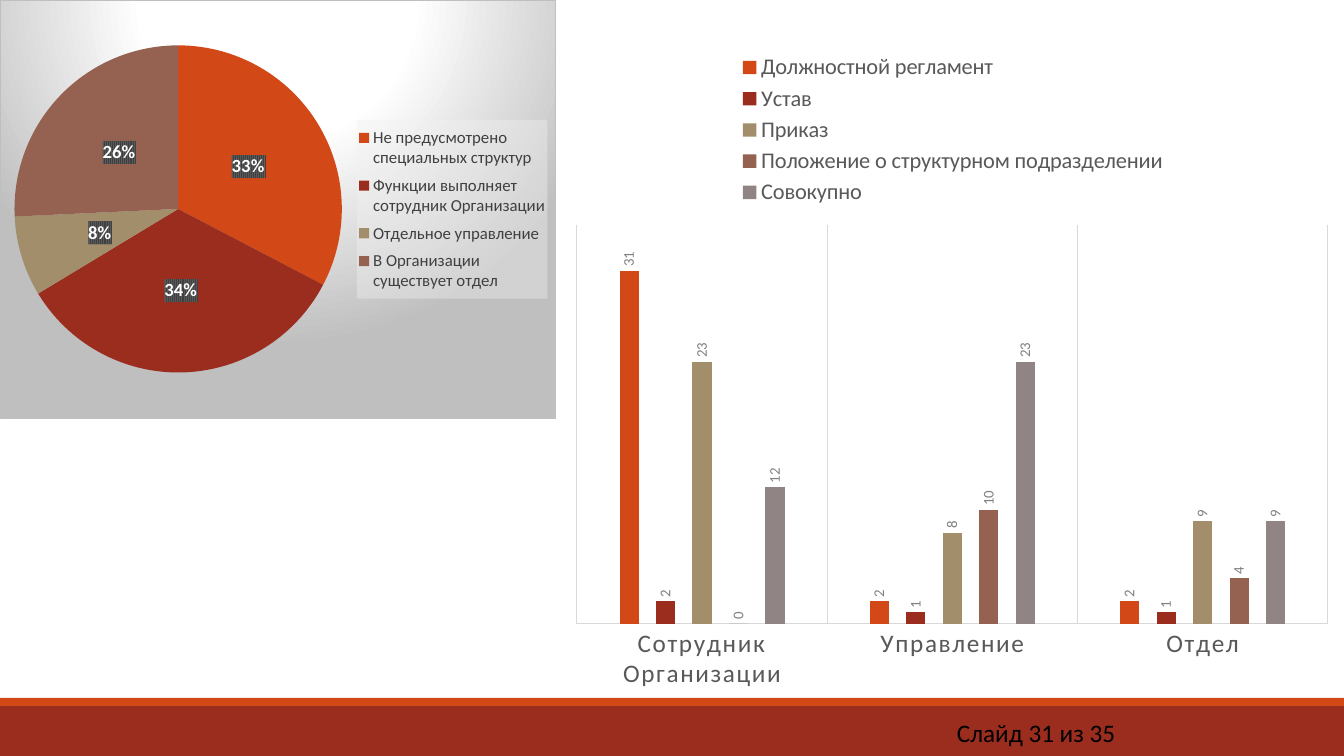
from dataclasses import dataclass

from lxml import etree
from pptx import Presentation
from pptx.chart.chart import Chart
from pptx.chart.data import CategoryChartData
from pptx.dml.color import RGBColor
from pptx.enum.chart import XL_CHART_TYPE, XL_LABEL_POSITION, XL_LEGEND_POSITION, XL_TICK_MARK
from pptx.enum.shapes import MSO_SHAPE
from pptx.enum.text import MSO_AUTO_SIZE
from pptx.oxml import parse_xml
from pptx.oxml.ns import qn
from pptx.util import Emu, Pt

EMU_PER_PX = 12192000 / 1344
FONT = "Calibri"
NAMESPACES = (
    'xmlns:c="http://schemas.openxmlformats.org/drawingml/2006/chart" '
    'xmlns:a="http://schemas.openxmlformats.org/drawingml/2006/main"'
)
ORANGE, RED, SAND, BROWN, MAUVE = "D34817", "9B2D1F", "A28E6A", "956251", "918485"
BLACK, WHITE, SILVER, PALE = "000000", "FFFFFF", "BFBFBF", "D9D9D9"


@dataclass(frozen=True)
class Area:
    left: int
    top: int
    width: int
    height: int

    def emu(self) -> list[Emu]:
        return [px(side) for side in (self.left, self.top, self.width, self.height)]


@dataclass(frozen=True)
class Band:
    area: Area
    fill: str


@dataclass(frozen=True)
class Slice:
    name: str
    value: int
    fill: str


@dataclass(frozen=True)
class ColumnSeries:
    name: str
    values: tuple[int, ...]
    fill: str


BANDS = (Band(Area(0, 706, 1344, 50), RED), Band(Area(0, 698, 1344, 8), ORANGE))
SLICES = (
    Slice("Не предусмотрено специальных структур", 33, ORANGE),
    Slice("Функции выполняет сотрудник Организации", 34, RED),
    Slice("Отдельное управление", 8, SAND),
    Slice("В Организации существует отдел", 26, BROWN),
)
UNITS = ("Сотрудник Организации", "Управление", "Отдел")
DOCUMENTS = (
    ColumnSeries("Должностной регламент", (31, 2, 2), ORANGE),
    ColumnSeries("Устав", (2, 1, 1), RED),
    ColumnSeries("Приказ", (23, 8, 9), SAND),
    ColumnSeries("Положение о структурном подразделении", (0, 10, 4), BROWN),
    ColumnSeries("Совокупно", (12, 23, 9), MAUVE),
)


def px(length: int) -> Emu:
    return Emu(round(length * EMU_PER_PX))


def color(value: str) -> RGBColor:
    return RGBColor.from_string(value)


def set_font(font, size: float, fill: str, bold: bool = False) -> None:
    font.name, font.size, font.bold = FONT, Pt(size), bold
    font.color.rgb = color(fill)


def paint(form, fill: str) -> None:
    form.fill.solid()
    form.fill.fore_color.rgb = color(fill)


def shape_properties(content: str) -> etree._Element:
    return parse_xml(f"<c:spPr {NAMESPACES}>{content}</c:spPr>")


def set_layout(holder, frame: Area, part: Area, inner: bool) -> etree._Element:
    """Place a chart part, given in slide px, inside its chart frame."""
    for old in holder.findall(qn("c:layout")):
        holder.remove(old)
    shares = {
        "x": (part.left - frame.left) / frame.width,
        "y": (part.top - frame.top) / frame.height,
        "w": part.width / frame.width,
        "h": part.height / frame.height,
    }
    target = '<c:layoutTarget val="inner"/>' if inner else ""
    modes = "".join(f'<c:{side}Mode val="edge"/>' for side in "xy")
    sizes = "".join(f'<c:{side} val="{share:.4f}"/>' for side, share in shares.items())
    layout = parse_xml(
        f"<c:layout {NAMESPACES}><c:manualLayout>{target}{modes}{sizes}</c:manualLayout></c:layout>"
    )
    holder.insert(0 if inner else 1, layout)


def add_chart(page, kind, frame: Area, data: CategoryChartData, plot: Area) -> Chart:
    chart = page.shapes.add_chart(kind, *frame.emu(), data).chart
    set_font(chart.font, 10, BLACK)
    chart.has_title = False
    set_layout(chart.plots[0]._element.getparent(), frame, plot, inner=True)
    return chart


def add_legend(chart: Chart, position, size: float, fill: str, frame: Area, area: Area) -> None:
    chart.has_legend = True
    legend = chart.legend
    legend.position, legend.include_in_layout = position, False
    set_font(legend.font, size, fill)
    set_layout(legend._element, frame, area, inner=False)


def add_pie(page) -> None:
    frame = Area(0, 0, 556, 419)
    data = CategoryChartData()
    data.categories = [part.name for part in SLICES]
    data.add_series("Series 1", [part.value for part in SLICES])
    chart = add_chart(page, XL_CHART_TYPE.PIE, frame, data, Area(14, 45, 328, 328))
    add_legend(chart, XL_LEGEND_POSITION.RIGHT, 12, "404040", frame, Area(357, 120, 191, 179))
    series = chart.plots[0].series[0]
    for index, part in enumerate(SLICES):
        paint(series.points[index].format, part.fill)

    # Percentages on a hatched ground
    labels = series.data_labels
    labels.show_percentage, labels.show_value = True, False
    labels.position = XL_LABEL_POSITION.CENTER
    set_font(labels.font, 13.3, WHITE, bold=True)
    hatch = shape_properties(
        '<a:pattFill prst="narVert"><a:fgClr><a:srgbClr val="404040"/></a:fgClr>'
        '<a:bgClr><a:srgbClr val="595959"/></a:bgClr></a:pattFill>'
    )
    labels._element.find(qn("c:txPr")).addprevious(hatch)

    # Translucent legend and radial chart background
    veil = shape_properties(
        '<a:solidFill><a:srgbClr val="F2F2F2"><a:alpha val="39000"/></a:srgbClr></a:solidFill>'
    )
    chart.legend._element.find(qn("c:txPr")).addprevious(veil)
    stops = "".join(
        f'<a:gs pos="{place}000"><a:srgbClr val="{fill}"/></a:gs>'
        for place, fill in ((0, WHITE), (39, WHITE), (100, SILVER))
    )
    glow = shape_properties(
        f'<a:gradFill><a:gsLst>{stops}</a:gsLst><a:path path="circle">'
        '<a:fillToRect l="50000" t="-80000" r="50000" b="180000"/></a:path></a:gradFill>'
        f'<a:ln w="9525"><a:solidFill><a:srgbClr val="{SILVER}"/></a:solidFill></a:ln>'
    )
    chart._chartSpace.find(qn("c:txPr")).addprevious(glow)


def add_columns(page) -> None:
    frame = Area(561, 41, 783, 661)
    data = CategoryChartData()
    data.categories = UNITS
    for document in DOCUMENTS:
        data.add_series(document.name, document.values)
    kind = XL_CHART_TYPE.COLUMN_CLUSTERED
    chart = add_chart(page, kind, frame, data, Area(577, 225, 751, 399))
    add_legend(chart, XL_LEGEND_POSITION.TOP, 16, "595959", frame, Area(737, 50, 432, 160))
    plot = chart.plots[0]
    plot.gap_width, plot.overlap, plot.vary_by_categories = 444, -90, False

    # Columns with upright values
    for series, document in zip(plot.series, DOCUMENTS):
        paint(series.format, document.fill)
        labels = series.data_labels
        labels.show_value, labels.position = True, XL_LABEL_POSITION.OUTSIDE_END
        set_font(labels.font, 10.6, "808080")
        body = labels._element.find(qn("c:txPr")).find(qn("a:bodyPr"))
        body.set("rot", "-5400000")
        body.set("vert", "horz")

    # Axes
    values, units = chart.value_axis, chart.category_axis
    values.visible = values.has_major_gridlines = False
    values.minimum_scale, values.maximum_scale = 0, 35
    units.major_tick_mark = units.minor_tick_mark = XL_TICK_MARK.NONE
    units.has_major_gridlines = True
    for line in (units.format.line, units.major_gridlines.format.line):
        line.color.rgb, line.width = color(PALE), Pt(0.75)
    set_font(units.tick_labels.font, 18, "595959")
    next(units._element.iter(qn("a:defRPr"))).set("spc", "120")


def add_footer(page) -> None:
    for band in BANDS:
        bar = page.shapes.add_shape(MSO_SHAPE.RECTANGLE, *band.area.emu())
        bar.shadow.inherit = False
        paint(bar, band.fill)
        bar.line.fill.background()
    box = page.shapes.add_textbox(*Area(947, 712, 187, 40).emu())
    box.text_frame.word_wrap = True
    box.text_frame.auto_size = MSO_AUTO_SIZE.SHAPE_TO_FIT_TEXT
    span = box.text_frame.paragraphs[0].add_run()
    span.text = "Слайд 31 из 35"
    set_font(span.font, 18, BLACK)


def main() -> None:
    deck = Presentation()
    deck.slide_width, deck.slide_height = px(1344), px(756)
    page = deck.slides.add_slide(deck.slide_layouts[6])
    add_footer(page)
    add_pie(page)
    add_columns(page)
    deck.save("out.pptx")


if __name__ == "__main__":
    main()
